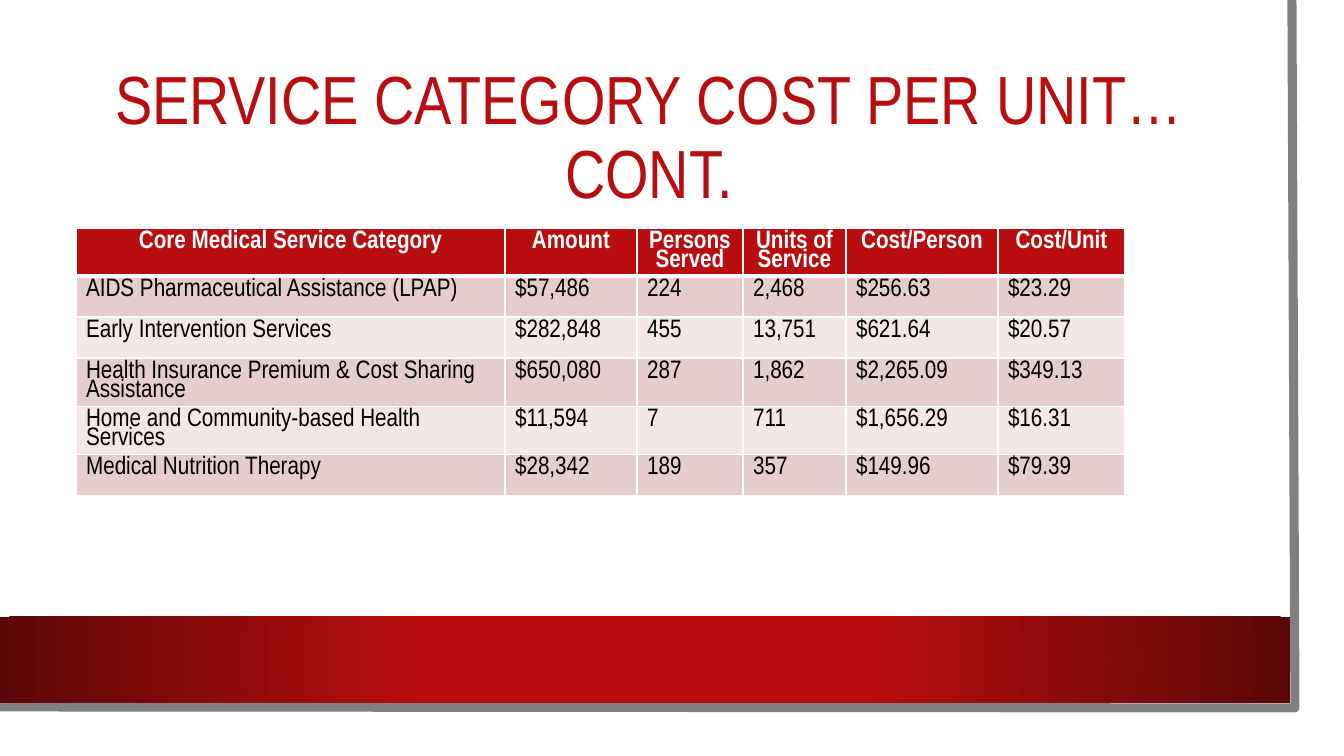
from lxml import etree
from pptx import Presentation
from pptx.dml.color import RGBColor
from pptx.enum.shapes import MSO_SHAPE
from pptx.enum.text import MSO_ANCHOR, MSO_AUTO_SIZE, PP_ALIGN
from pptx.oxml import parse_xml
from pptx.oxml.ns import nsdecls, qn
from pptx.util import Pt

PX = 914400 / 100.8
FONT = "Arial Narrow"
COLORS = {
    "red": "B80E0F",
    "dark_red": "5C0707",
    "gray": "808080",
    "white": "FFFFFF",
    "black": "000000",
    "band_dark": "E6CCCC",
    "band_light": "F3E7E7",
}
COLUMN_WIDTHS = [429, 132, 106, 103, 152, 127]
ROW_HEIGHT = 41
ROWS = [
    ["Core Medical Service Category", "Amount", "Persons Served",
     "Units of Service", "Cost/Person", "Cost/Unit"],
    ["AIDS Pharmaceutical Assistance (LPAP)", "$57,486", "224", "2,468", "$256.63", "$23.29"],
    ["Early Intervention Services", "$282,848", "455", "13,751", "$621.64", "$20.57"],
    ["Health Insurance Premium & Cost Sharing Assistance", "$650,080", "287", "1,862",
     "$2,265.09", "$349.13"],
    ["Home and Community-based Health Services", "$11,594", "7", "711", "$1,656.29", "$16.31"],
    ["Medical Nutrition Therapy", "$28,342", "189", "357", "$149.96", "$79.39"],
]


def px(value):
    return round(value * PX)


def rgb(name):
    return RGBColor.from_string(COLORS[name])


def format_paragraph(p, size, color, align, spacing, bold=False):
    p.alignment = align
    p.line_spacing = spacing
    for r in p.runs:
        r.font.name = FONT
        r.font.size = Pt(size)
        r.font.bold = bold
        r.font.color.rgb = rgb(color)


def add_frame(slide):
    builder = slide.shapes.build_freeform(px(1292), 0)
    builder.add_line_segments([(px(1295), px(708)), (0, px(707))], close=False)
    sp = builder.convert_to_shape()
    sp.shadow.inherit = False
    sp.fill.background()
    sp.line.color.rgb = rgb("gray")
    sp.line.width = Pt(6.5)


def add_footer_band(slide):
    sp = slide.shapes.add_shape(MSO_SHAPE.RECTANGLE, 0, px(617), px(1290), px(86))
    sp.shadow.inherit = False
    sp.line.fill.background()
    stops = "".join(
        f'<a:gs pos="{pos}000"><a:srgbClr val="{COLORS[name]}"/></a:gs>'
        for pos, name in [(34, "red"), (100, "dark_red")]
    )
    gradient = parse_xml(
        f'<a:gradFill {nsdecls("a")}><a:gsLst>{stops}</a:gsLst><a:path path="circle">'
        '<a:fillToRect l="50000" t="50000" r="50000" b="50000"/></a:path></a:gradFill>'
    )
    sp._element.spPr.find(qn("a:prstGeom")).addnext(gradient)


def add_title(slide, text):
    sp = slide.shapes.title
    sp.left, sp.top, sp.width, sp.height = px(76), px(76), px(1146), px(127)
    tf = sp.text_frame
    tf.text = text
    tf.word_wrap = True
    tf.auto_size = MSO_AUTO_SIZE.NONE
    tf.vertical_anchor = MSO_ANCHOR.MIDDLE
    format_paragraph(tf.paragraphs[0], 48.6, "red", PP_ALIGN.CENTER, 0.9)


def set_borders(cell, bottom_width):
    tcPr = cell._tc.get_or_add_tcPr()
    widths = {"lnL": 1, "lnR": 1, "lnT": 1, "lnB": bottom_width}
    for index, (tag, width) in enumerate(widths.items()):
        ln = etree.Element(qn(f"a:{tag}"), w=str(Pt(width)))
        fill = etree.SubElement(ln, qn("a:solidFill"))
        etree.SubElement(fill, qn("a:srgbClr"), val=COLORS["white"])
        tcPr.insert(index, ln)


def format_cell(cell, text, row):
    header = row == 0
    fill = "red" if header else "band_dark" if row % 2 else "band_light"
    cell.fill.solid()
    cell.fill.fore_color.rgb = rgb(fill)
    set_borders(cell, 3 if header else 1)
    cell.text_frame.text = text
    format_paragraph(
        cell.text_frame.paragraphs[0], 18,
        "white" if header else "black",
        PP_ALIGN.CENTER if header else PP_ALIGN.LEFT,
        0.8, header,
    )


def add_cost_table(slide):
    frame = slide.shapes.add_table(
        len(ROWS), len(COLUMN_WIDTHS), px(76), px(228),
        px(sum(COLUMN_WIDTHS)), px(ROW_HEIGHT * len(ROWS)),
    )
    table = frame.table
    for column, width in zip(table.columns, COLUMN_WIDTHS):
        column.width = px(width)
    for row, values in enumerate(ROWS):
        for col, text in enumerate(values):
            format_cell(table.cell(row, col), text, row)


def main():
    prs = Presentation()
    prs.slide_width, prs.slide_height = px(1344), px(756)
    slide = prs.slides.add_slide(prs.slide_layouts[5])
    add_frame(slide)
    add_footer_band(slide)
    add_title(slide, "SERVICE CATEGORY COST PER UNIT…CONT.")
    add_cost_table(slide)
    prs.save("out.pptx")


if __name__ == "__main__":
    main()
